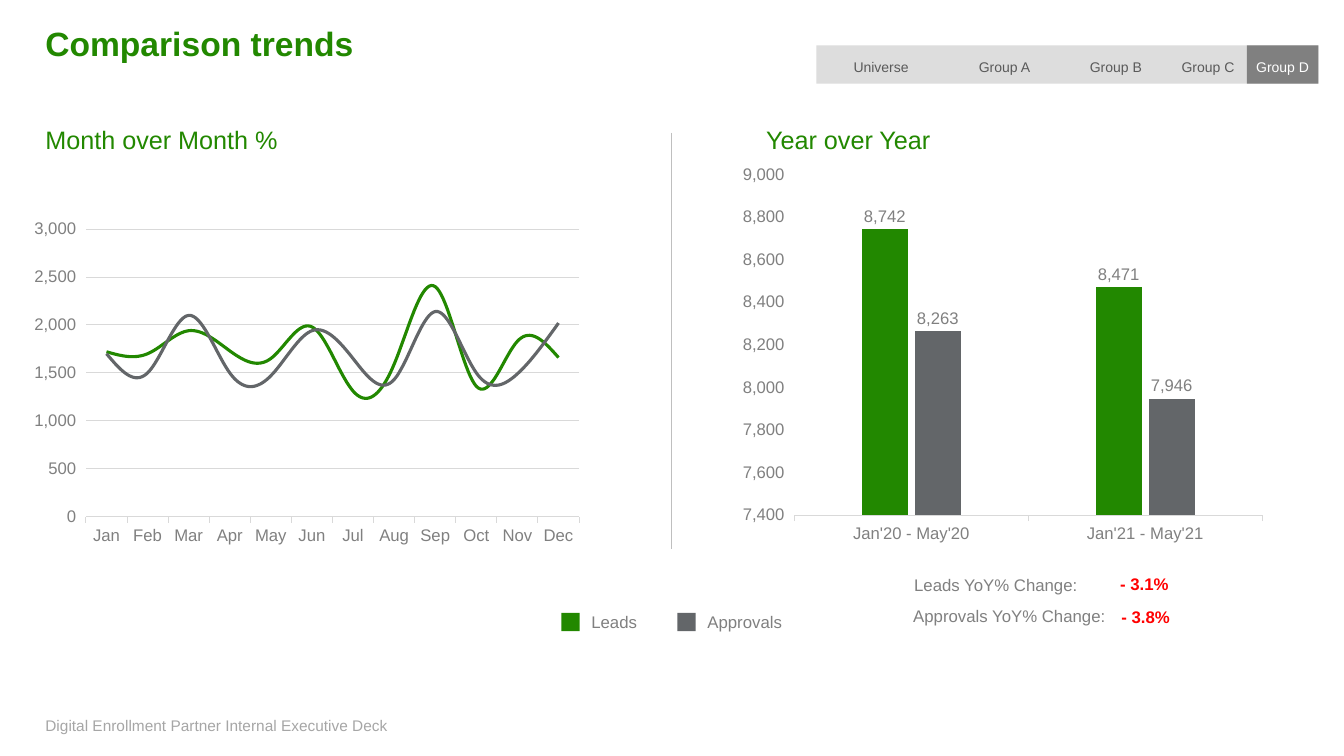
from pptx import Presentation
from pptx.chart.data import CategoryChartData
from pptx.dml.color import RGBColor
from pptx.enum.chart import XL_CHART_TYPE, XL_LABEL_POSITION, XL_TICK_LABEL_POSITION, XL_TICK_MARK
from pptx.enum.shapes import MSO_CONNECTOR, MSO_SHAPE
from pptx.enum.text import MSO_ANCHOR, MSO_AUTO_SIZE, PP_ALIGN
from pptx.oxml import parse_xml
from pptx.oxml.ns import nsdecls, qn
from pptx.util import Pt
from lxml.etree import SubElement

GREEN = RGBColor(0x22, 0x88, 0x00)
SLATE = RGBColor(0x63, 0x66, 0x69)
GRAY = RGBColor(0x80, 0x80, 0x80)
TAB_TEXT = RGBColor(0x5A, 0x5A, 0x5A)
TAB_BAR = RGBColor(0xDD, 0xDD, 0xDD)
FOOTER_GRAY = RGBColor(0xA6, 0xA6, 0xA6)
DIVIDER_GRAY = RGBColor(0xBF, 0xBF, 0xBF)
GRID_GRAY = RGBColor(0xD9, 0xD9, 0xD9)
RED = RGBColor(0xFF, 0x00, 0x00)
WHITE = RGBColor(0xFF, 0xFF, 0xFF)

FONT = "Arial"
NUMBER = "#,##0"
MEASURES = {"Leads": GREEN, "Approvals": SLATE}
MONTHS = ["Jan", "Feb", "Mar", "Apr", "May", "Jun", "Jul", "Aug", "Sep", "Oct", "Nov", "Dec"]
MONTHLY = {
    "Leads": [1720, 1700, 1940, 1730, 1650, 1980, 1310, 1590, 2400, 1360, 1830, 1660],
    "Approvals": [1700, 1500, 2100, 1500, 1470, 1940, 1650, 1430, 2140, 1500, 1490, 2020],
}
PERIODS = ["Jan'20 - May'20", "Jan'21 - May'21"]
YEARLY = {"Leads": [8742, 8471], "Approvals": [8263, 7946]}
TABS = [("Universe", 583.2, 92.2), ("Group A", 676.1, 82.8), ("Group B", 758.9, 76.3),
        ("Group C", 836.6, 52.6), ("Group D", 890.6, 51.1)]
TAB_TOP, TAB_HEIGHT = 32.4, 27.4
TAB_FRAME = {"margin_left": Pt(7.2), "margin_top": Pt(3.6), "margin_right": Pt(7.2),
             "auto_size": MSO_AUTO_SIZE.NONE}
CHANGES = [("Leads YoY% Change:", "- 3.1%", 653, 410.4, 789.8, 409.7),
           ("Approvals YoY% Change:", "- 3.8%", 652.3, 432.7, 790.6, 433.4)]


def assign(target, values):
    """Set each named attribute of the target."""
    for name, value in values.items():
        setattr(target, name, value)


def set_font(font, size, color, bold=False):
    """Apply the deck font in a size and colour."""
    assign(font, {"name": FONT, "size": Pt(size), "bold": bold})
    font.color.rgb = color


def write(holder, wording, size, color, bold=False, align=PP_ALIGN.LEFT, wrap=False, **frame_format):
    """Put one styled paragraph into a shape or text box."""
    frame = holder.text_frame
    assign(frame, {"margin_left": 0, "margin_top": 0, "margin_right": 0, "margin_bottom": 0,
                   "word_wrap": wrap, "vertical_anchor": MSO_ANCHOR.MIDDLE,
                   "auto_size": MSO_AUTO_SIZE.SHAPE_TO_FIT_TEXT, **frame_format})
    paragraph = frame.paragraphs[0]
    paragraph.alignment = align
    run = paragraph.add_run()
    run.text = wording
    set_font(run.font, size, color, bold)


def add_label(shapes, box, wording, size, color, **style):
    """Add a text box at a box given in points."""
    write(shapes.add_textbox(*map(Pt, box)), wording, size, color, **style)


def add_block(shapes, box, color):
    """Add a plain filled rectangle."""
    block = shapes.add_shape(MSO_SHAPE.RECTANGLE, *map(Pt, box))
    block.shadow.inherit = False
    block.fill.solid()
    block.fill.fore_color.rgb = color
    block.line.fill.background()
    return block


def add_divider(shapes):
    """Add the vertical rule between the two charts."""
    divider = shapes.add_connector(MSO_CONNECTOR.STRAIGHT, Pt(480), Pt(95), Pt(480), Pt(392.4))
    style_line(divider.line, DIVIDER_GRAY, 0.75)
    SubElement(divider.line._get_or_add_ln().getparent(), qn("a:effectLst"))


def style_line(line, color, width):
    """Give a line its colour and width."""
    line.color.rgb = color
    line.width = Pt(width)


def set_plot_layout(chart, x, y, w, h):
    """Fix the inner plot area as fractions of the chart."""
    plot_area = chart._chartSpace.chart.plotArea
    for old_layout in plot_area.findall(qn("c:layout")):
        plot_area.remove(old_layout)
    plot_area.insert(0, parse_xml(
        f'<c:layout {nsdecls("c")}><c:manualLayout><c:layoutTarget val="inner"/>'
        f'<c:xMode val="edge"/><c:yMode val="edge"/><c:x val="{x}"/><c:y val="{y}"/>'
        f'<c:w val="{w}"/><c:h val="{h}"/></c:manualLayout></c:layout>'))


def add_trend_chart(shapes, kind, box, categories, measures, layout, scale):
    """Add a chart with the shared axis styling."""
    chart_data = CategoryChartData(number_format=NUMBER)
    chart_data.categories = categories
    for measure, values in measures.items():
        chart_data.add_series(measure, values)
    chart = shapes.add_chart(kind, *map(Pt, box), chart_data).chart
    assign(chart, {"has_legend": False, "has_title": False})
    set_font(chart.font, 10, GRAY)
    for axis in (chart.category_axis, chart.value_axis):
        assign(axis, {"major_tick_mark": XL_TICK_MARK.OUTSIDE, "minor_tick_mark": XL_TICK_MARK.NONE,
                      "has_major_gridlines": False})
        set_font(axis.tick_labels.font, 12, GRAY)
    style_line(chart.category_axis.format.line, GRID_GRAY, 0.75)
    assign(chart.value_axis, scale)
    chart.value_axis.format.line.fill.background()
    assign(chart.value_axis.tick_labels, {"number_format": NUMBER, "number_format_is_linked": False})
    chart.plots[0].vary_by_categories = False
    set_plot_layout(chart, *layout)
    return chart


def add_monthly_chart(shapes):
    """Add the smoothed monthly line chart."""
    chart = add_trend_chart(shapes, XL_CHART_TYPE.LINE, (24.5, 103.7, 400.3, 333.4), MONTHS, MONTHLY,
                            (0.087, 0.18, 0.885, 0.616),
                            {"minimum_scale": 0, "maximum_scale": 3000, "major_unit": 500})
    chart.category_axis.tick_label_position = XL_TICK_LABEL_POSITION.LOW
    chart.value_axis.has_major_gridlines = True
    style_line(chart.value_axis.major_gridlines.format.line, GRID_GRAY, 0.75)
    for series in chart.plots[0].series:
        series.smooth = True
        style_line(series.format.line, MEASURES[series.name], 2.25)


def add_yearly_chart(shapes):
    """Add the labelled yearly column chart."""
    chart = add_trend_chart(shapes, XL_CHART_TYPE.COLUMN_CLUSTERED, (530.6, 103.7, 381.6, 333.4),
                            PERIODS, YEARLY, (0.09, 0.063, 0.882, 0.73),
                            {"minimum_scale": 7400, "maximum_scale": 9000, "major_unit": 200})
    assign(chart.plots[0], {"gap_width": 292, "overlap": -15})
    for series in chart.plots[0].series:
        series.format.fill.solid()
        series.format.fill.fore_color.rgb = MEASURES[series.name]
        assign(series.data_labels, {"show_value": True, "position": XL_LABEL_POSITION.OUTSIDE_END,
                                    "number_format": NUMBER, "number_format_is_linked": False})
        set_font(series.data_labels.font, 12, GRAY)


def add_legend(shapes):
    """Add the legend shared by both charts."""
    legend = shapes.add_group_shape().shapes
    for index, (measure, color) in enumerate(MEASURES.items()):
        left = 401 + 82.9 * index
        add_block(legend, (left, 437.8, 13, 13), color)
        add_label(legend, (left + 21.4, 437, (33, 54)[index], 14.4), measure, 12, GRAY)


def add_tabs(shapes):
    """Add the tab bar with its last tab selected."""
    bar_left, (selected, selected_left, selected_width) = TABS[0][1], TABS[-1]
    add_block(shapes, (bar_left, TAB_TOP, selected_left + selected_width - bar_left, TAB_HEIGHT), TAB_BAR)
    for tab, left, width in TABS[:-1]:
        add_label(shapes, (left, TAB_TOP, width, TAB_HEIGHT), tab, 10, TAB_TEXT,
                  align=PP_ALIGN.CENTER, **TAB_FRAME)
    selected_tab = add_block(shapes, (selected_left, TAB_TOP, selected_width, TAB_HEIGHT), GRAY)
    write(selected_tab, selected, 10, WHITE, align=PP_ALIGN.CENTER, **TAB_FRAME)


def main():
    """Build the comparison slide and save it."""
    deck = Presentation()
    assign(deck, {"slide_width": Pt(960), "slide_height": Pt(540)})
    shapes = deck.slides.add_slide(deck.slide_layouts[6]).shapes
    add_label(shapes, (32.4, 16.6, 717, 28.8), "Comparison trends", 24, GREEN, bold=True, wrap=True)
    for heading, left in (("Month over Month %", 32.4), ("Year over Year", 547.2)):
        add_label(shapes, (left, 88.6, 208.8, 21.6), heading, 18, GREEN, wrap=True,
                  vertical_anchor=MSO_ANCHOR.TOP)
    add_monthly_chart(shapes)
    add_yearly_chart(shapes)
    add_divider(shapes)
    add_legend(shapes)
    add_tabs(shapes)
    for caption, change, caption_left, caption_top, change_left, change_top in CHANGES:
        add_label(shapes, (caption_left, caption_top, 138, 14.4), caption, 12, GRAY)
        add_label(shapes, (change_left, change_top, 55.4, 14.4), change, 12, RED, bold=True,
                  align=PP_ALIGN.CENTER, wrap=True)
    add_label(shapes, (32.4, 511.2, 246.2, 13.7), "Digital Enrollment Partner Internal Executive Deck",
              11, FOOTER_GRAY)
    deck.save("out.pptx")


if __name__ == "__main__":
    main()
